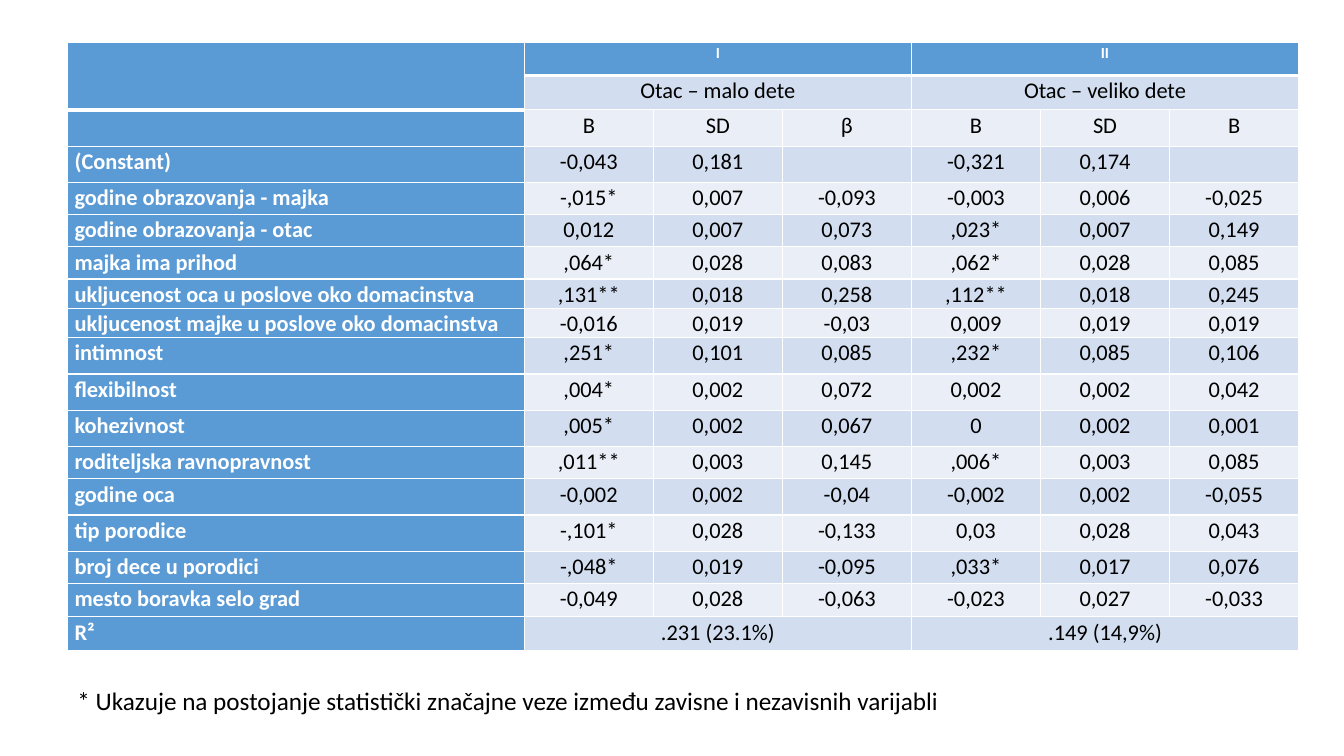
import pptx
import pptx.util
import pptx.dml.color
import pptx.enum.text
import lxml.etree
from pptx.util import Inches, Pt

ROWS = [
    (0.33, ["", "I", "", "", "II", "", ""]),
    (0.34, ["", "Otac – malo dete", "", "", "Otac – veliko dete", "", ""]),
    (0.36, ["", "B", "SD", "β", "B", "SD", "Β"]),
    (0.36, ["(Constant)", "-0,043", "0,181", "", "-0,321", "0,174", ""]),
    (0.32, ["godine obrazovanja - majka", "-,015*", "0,007", "-0,093", "-0,003", "0,006", "-0,025"]),
    (0.32, ["godine obrazovanja - otac", "0,012", "0,007", "0,073", ",023*", "0,007", "0,149"]),
    (0.32, ["majka ima prihod", ",064*", "0,028", "0,083", ",062*", "0,028", "0,085"]),
    (0.29, ["ukljucenost oca u poslove oko domacinstva", ",131**", "0,018", "0,258", ",112**", "0,018", "0,245"]),
    (0.29, ["ukljucenost majke u poslove oko domacinstva", "-0,016", "0,019", "-0,03", "0,009", "0,019", "0,019"]),
    (0.36, ["intimnost", ",251*", "0,101", "0,085", ",232*", "0,085", "0,106"]),
    (0.36, ["flexibilnost", ",004*", "0,002", "0,072", "0,002", "0,002", "0,042"]),
    (0.36, ["kohezivnost", ",005*", "0,002", "0,067", "0", "0,002", "0,001"]),
    (0.32, ["roditeljska ravnopravnost", ",011**", "0,003", "0,145", ",006*", "0,003", "0,085"]),
    (0.36, ["godine oca", "-0,002", "0,002", "-0,04", "-0,002", "0,002", "-0,055"]),
    (0.36, ["tip porodice", "-,101*", "0,028", "-0,133", "0,03", "0,028", "0,043"]),
    (0.32, ["broj dece u porodici", "-,048*", "0,019", "-0,095", ",033*", "0,017", "0,076"]),
    (0.33, ["mesto boravka selo grad", "-0,049", "0,028", "-0,063", "-0,023", "0,027", "-0,033"]),
    (0.34, ["R²", ".231 (23.1%)", "", "", ".149 (14,9%)", "", ""]),
]
COLS = [4.53] + [1.28] * 6
MERGES = [(0, 0, 1, 0)] + [(r, c, r, c + 2) for r in (0, 1, len(ROWS) - 1) for c in (1, 4)]
NOTE = "* Ukazuje na postojanje statistički značajne veze između zavisne i nezavisnih varijabli"
BLUE, BANDS, WHITE, BLACK = "5B9BD5", ("EAEFF7", "D2DEEF"), "FFFFFF", "000000"


def color(value):
    return pptx.dml.color.RGBColor.from_string(value)


def set_font(p, size, value, bold=False):
    p.font.name = "Calibri"
    p.font.size = Pt(size)
    p.font.bold = bold
    p.font.color.rgb = color(value)


def set_borders(cell, top, bottom):
    tc_pr = cell._tc.get_or_add_tcPr()
    for side, width in (("L", 1), ("R", 1), ("T", top), ("B", bottom)):
        tc_pr.append(lxml.etree.fromstring(
            f'<a:ln{side} xmlns:a="http://schemas.openxmlformats.org/drawingml/2006/main" w="{Pt(width)}">'
            f'<a:solidFill><a:srgbClr val="{WHITE}"/></a:solidFill></a:ln{side}>'))


def format_cell(cell, row, col, text):
    header = row == 0 or col == 0
    rule = 1 if col == 0 else 0
    set_borders(cell, 3 if row == rule + 1 else 1, 3 if row == rule else 1)
    cell.fill.solid()
    cell.fill.fore_color.rgb = color(BLUE if header else BANDS[row % 2])
    cell.margin_left = cell.margin_right = Inches(0.07)
    cell.margin_top = cell.margin_bottom = 0
    p = cell.text_frame.paragraphs[0]
    p.line_spacing = 1.07
    if col:
        p.alignment = pptx.enum.text.PP_ALIGN.CENTER
    set_font(p, 11 if row == 0 else 16, WHITE if header else BLACK, header)
    if text:
        p.add_run().text = text


def main():
    prs = pptx.Presentation()
    prs.slide_width, prs.slide_height = Inches(13.33), Inches(7.5)
    s = prs.slides.add_slide(prs.slide_layouts[6])

    height = sum(h for h, _ in ROWS)
    table = s.shapes.add_table(len(ROWS), len(COLS), Inches(0.67), Inches(0.42),
                               Inches(sum(COLS)), Inches(height)).table
    for col, width in enumerate(COLS):
        table.columns[col].width = Inches(width)
    for row, (h, texts) in enumerate(ROWS):
        table.rows[row].height = Inches(h)
        for col, text in enumerate(texts):
            format_cell(table.cell(row, col), row, col, text)
    for top, left, bottom, right in MERGES:
        table.cell(top, left).merge(table.cell(bottom, right))

    tf = s.shapes.add_textbox(Inches(0.67), Inches(6.75), Inches(10.87), Inches(0.4)).text_frame
    tf.word_wrap = True
    p = tf.paragraphs[0]
    p.text = NOTE
    set_font(p, 18, BLACK)

    prs.save("out.pptx")


if __name__ == "__main__":
    main()
